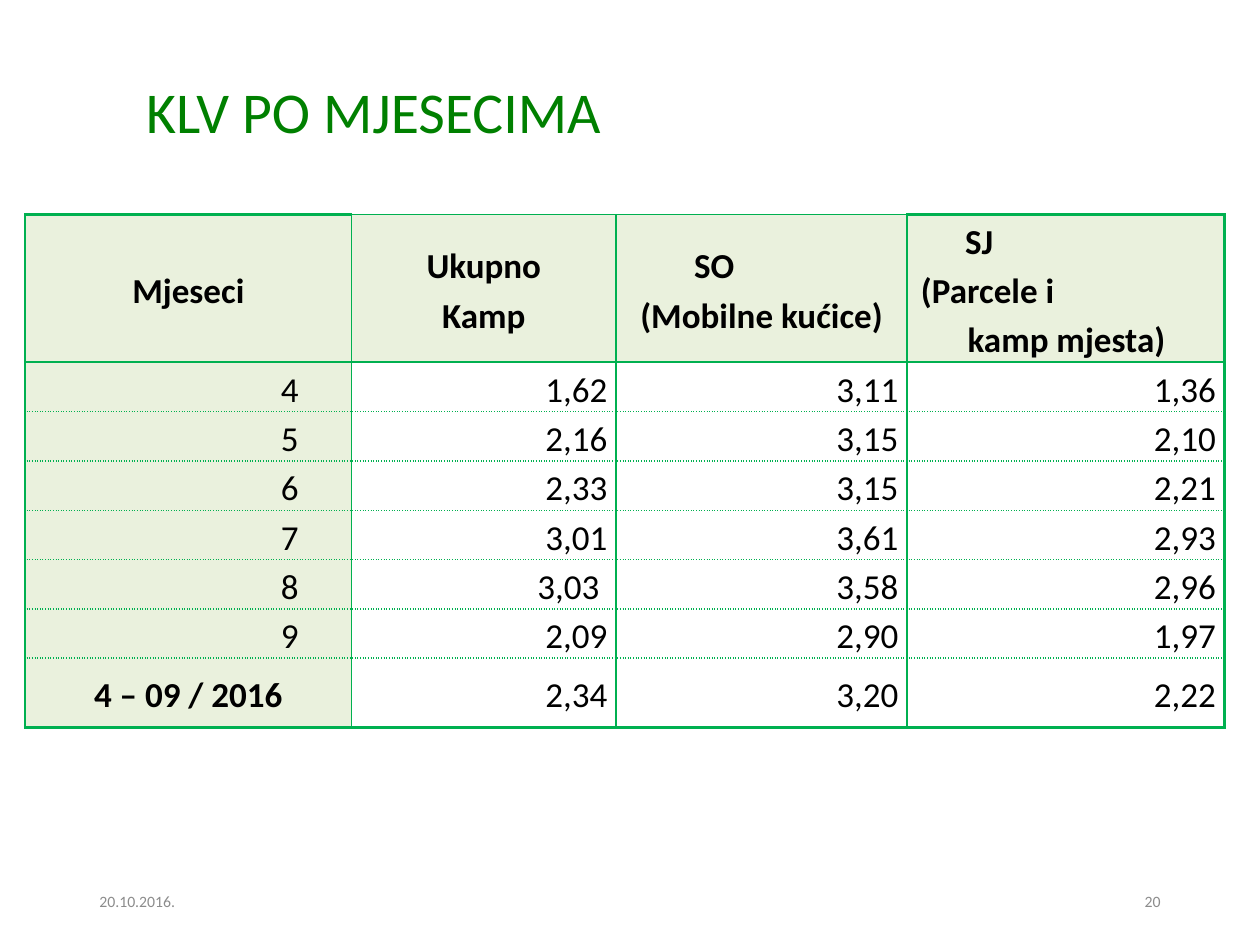
from lxml.etree import SubElement
from pptx import Presentation
from pptx.dml.color import RGBColor
from pptx.enum.text import MSO_ANCHOR, MSO_AUTO_SIZE, PP_ALIGN
from pptx.oxml.ns import qn
from pptx.util import Emu, Inches, Pt

HEADERS = [
    [("Mjeseci", None)],
    [("Ukupno", None), ("Kamp", None)],
    [("SO", 0.55), ("(Mobilne kućice)", None)],
    [("SJ", 0.39), ("(Parcele i", 0.04), ("kamp mjesta)", 0.41)],
]
MONTHS = [
    ("4", "1,62", "3,11", "1,36"),
    ("5", "2,16", "3,15", "2,10"),
    ("6", "2,33", "3,15", "2,21"),
    ("7", "3,01", "3,61", "2,93"),
    ("8", "3,03 ", "3,58", "2,96"),
    ("9", "2,09", "2,90", "1,97"),
]
TOTAL = ("4 – 09 / 2016", "2,34", "3,20", "2,22")
COL_WIDTHS = [2.59, 2.1, 2.31, 2.52]
ROW_HEIGHTS = [1.06] + [0.38] * len(MONTHS) + [0.55]


def rgb(value):
    """Turn a hex string into a colour."""
    return RGBColor.from_string(value)


def write(p, text, size=20, color="000000", bold=False, align=PP_ALIGN.LEFT,
          spacing=None, after=None, indent=None, font="Calibri"):
    """Put one formatted run into a paragraph."""
    p.alignment = align
    p.line_spacing = spacing
    if after is not None:
        p.space_after = Pt(after)
    if indent is not None:
        p._p.get_or_add_pPr().set("marL", str(Inches(indent)))
    r = p.add_run()
    r.text = text
    r.font.name, r.font.size, r.font.bold = font, Pt(size), bold
    r.font.color.rgb = rgb(color)


class Deck:
    """Style and current slide, with a method for each kind of element."""

    green, line, tint, white, grey = "008000", "00B050", "EAF1DD", "FFFFFF", "8C8C8C"

    def __init__(self, width, height):
        """Open a presentation of the given size in inches."""
        self.prs = Presentation()
        self.prs.slide_width, self.prs.slide_height = Inches(width), Inches(height)
        self.s = self.prs.slides.add_slide(self.prs.slide_layouts[5])

    def box(self, x, y, w, h):
        """Convert percentages of the slide into lengths."""
        pw, ph = self.prs.slide_width, self.prs.slide_height
        return [Emu(int(v / 100)) for v in (x * pw, y * ph, w * pw, h * ph)]

    def title(self, text, *shares):
        """Place and fill the title placeholder."""
        sp = self.s.shapes.title
        sp.left, sp.top, sp.width, sp.height = self.box(*shares)
        tf = sp.text_frame
        tf.auto_size, tf.vertical_anchor = MSO_AUTO_SIZE.NONE, MSO_ANCHOR.MIDDLE
        write(tf.paragraphs[0], text, size=33, color=self.green, spacing=0.9)

    def footer(self, text, align, *shares):
        """Add a small grey text at the foot."""
        tf = self.s.shapes.add_textbox(*self.box(*shares)).text_frame
        tf.word_wrap, tf.vertical_anchor = True, MSO_ANCHOR.MIDDLE
        write(tf.paragraphs[0], text, size=9, color=self.grey, align=align)

    def border(self, cell, side, width, dash="solid"):
        """Draw one side of a cell."""
        ln = SubElement(cell._tc.get_or_add_tcPr(), qn(f"a:ln{side}"), w=str(Pt(width)))
        fill = SubElement(ln, qn("a:solidFill"))
        SubElement(fill, qn("a:srgbClr"), val=self.line)
        SubElement(ln, qn("a:prstDash"), val=dash)

    def cell(self, tbl, row, col, lines, anchor, margin=0.07, **fmt):
        """Border, fill and write one table cell."""
        cell = tbl.cell(row, col)
        last_row, last_col = len(tbl.rows) - 1, len(tbl.columns) - 1
        outer = col in (0, last_col)
        self.border(cell, "L", 1.5 if col == 0 else 1)
        self.border(cell, "R", 1.5 if col == last_col else 1)
        if row < 2:
            self.border(cell, "T", 1.5 if row or outer else 1)
        else:
            self.border(cell, "T", 1, "sysDot")
        if row in (0, last_row):
            self.border(cell, "B", 1.5)
        else:
            self.border(cell, "B", 1, "sysDot")
        cell.fill.solid()
        cell.fill.fore_color.rgb = rgb(self.white if row and col else self.tint)
        cell.vertical_anchor = anchor
        cell.margin_left, cell.margin_right = Inches(0.07), Inches(margin)
        cell.margin_top = cell.margin_bottom = 0
        tf = cell.text_frame
        for i, (text, indent) in enumerate(lines):
            p = tf.add_paragraph() if i else tf.paragraphs[0]
            style = dict(fmt, align=PP_ALIGN.LEFT) if indent is not None else fmt
            write(p, text, spacing=1.15, indent=indent, **style)

    def table(self, *shares):
        """Add the monthly table with its header and total."""
        tbl = self.s.shapes.add_table(len(ROW_HEIGHTS), len(COL_WIDTHS),
                                      *self.box(*shares)).table
        tbl.first_row = tbl.horz_banding = False
        for column, width in zip(tbl.columns, COL_WIDTHS):
            column.width = Inches(width)
        for row, height in zip(tbl.rows, ROW_HEIGHTS):
            row.height = Inches(height)
        label = dict(anchor=MSO_ANCHOR.MIDDLE, align=PP_ALIGN.CENTER, bold=True)
        for c, lines in enumerate(HEADERS):
            self.cell(tbl, 0, c, lines, **label)
        for r, values in enumerate(MONTHS, 1):
            for c, text in enumerate(values):
                self.cell(tbl, r, c, [(text, None)], MSO_ANCHOR.BOTTOM,
                          margin=0.07 if c else 0.42, align=PP_ALIGN.RIGHT)
        total = dict(anchor=MSO_ANCHOR.MIDDLE, align=PP_ALIGN.RIGHT, after=10)
        for c, text in enumerate(TOTAL):
            self.cell(tbl, len(MONTHS) + 1, c, [(text, None)], **(total if c else label))


def main():
    """Build the slide and save it."""
    deck = Deck(10, 7.5)
    deck.title("KLV PO MJESECIMA", 10.6, 3.85, 71.2, 16.7)
    deck.table(2, 22.7, 95.3, 53.5)
    deck.footer("20.10.2016.", PP_ALIGN.LEFT, 6.9, 92.7, 22.5, 5.3)
    deck.footer("20", PP_ALIGN.RIGHT, 70.6, 92.7, 22.5, 5.3)
    deck.prs.save("out.pptx")


if __name__ == "__main__":
    main()
